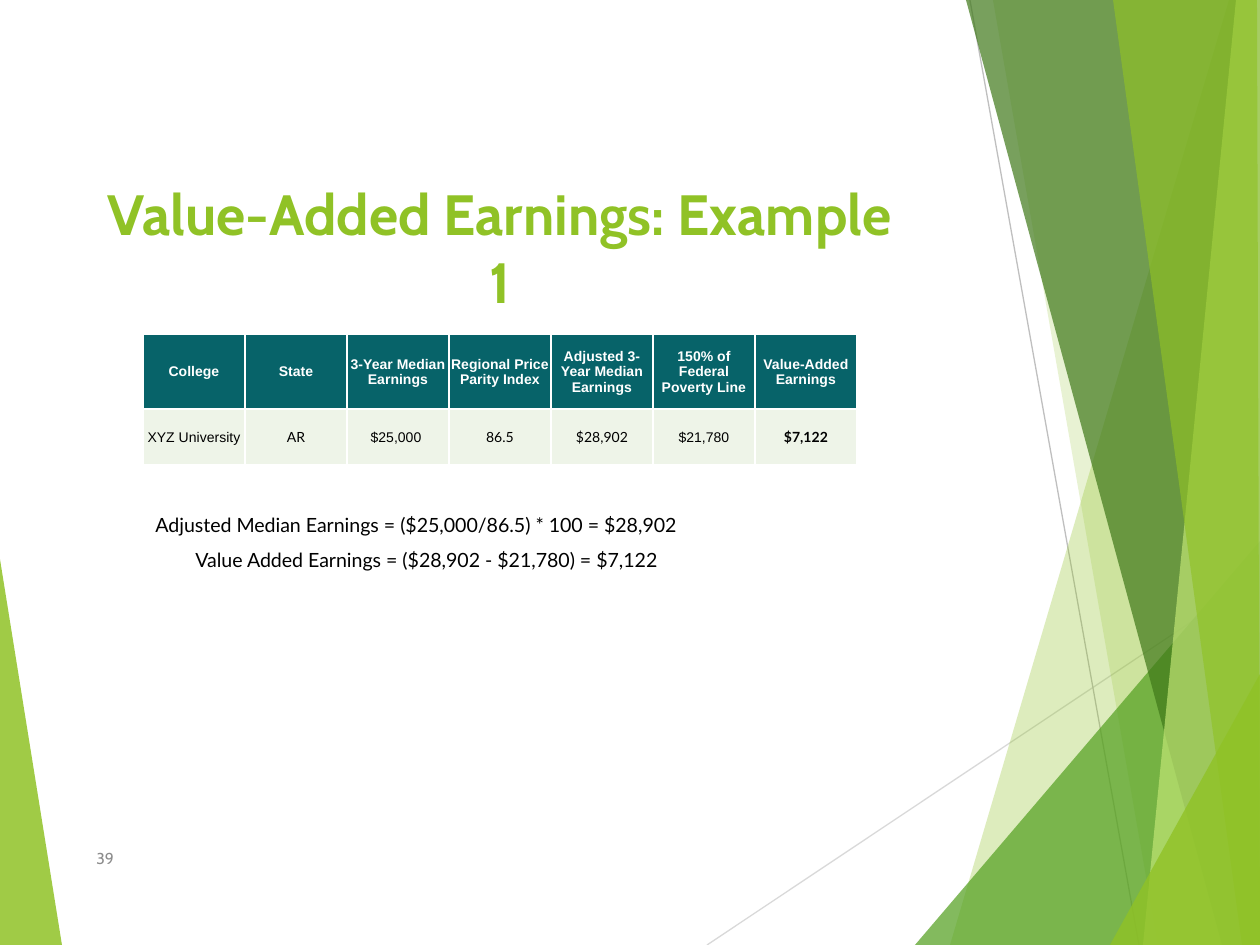
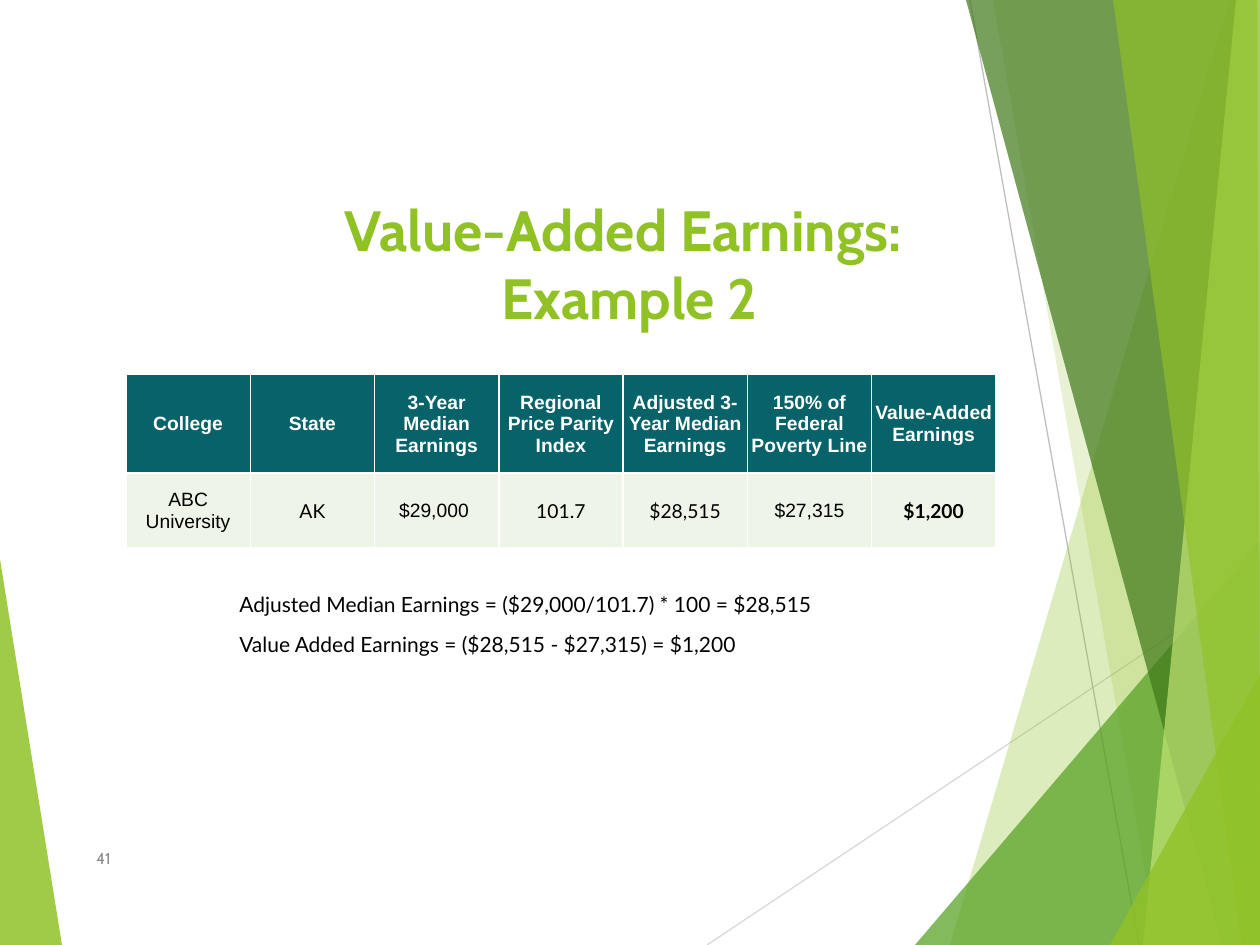
from lxml import etree
from pptx import Presentation
from pptx import util as u
from pptx.dml.color import RGBColor
from pptx.enum import shapes, text
from pptx.oxml.ns import qn

EMU_PER_PX = 914400 / 126
SLIDE_W, SLIDE_H = 1260, 945

COLORS = {
    "lime": "90C226", "green": "54A021", "forest": "3F7819", "pale_lime": "C0E474",
    "light_line": "D9D9D9", "mid_line": "BFBFBF", "footer": "8C8C8C",
    "header": "076369", "row": "EEF4E8", "white": "FFFFFF", "black": "000000",
}
TITLE_FONT, BODY_FONT, TABLE_FONT = "Cabin", "Lato", "Arial"

# Lines: colour, start, end
LINES = [
    ("light_line", (707, 945), (1260, 576)),
    ("mid_line", (970, 0), (1139, 945)),
]
# Facets, back to front: colour, opacity in percent, corners
LEFT_FACET = ("lime", 85, [(0, 559), (62, 945), (0, 945)])
RIGHT_FACETS = [
    ("lime", 30, [(1229, 0), (950, 945), (1260, 945), (1260, 0)]),
    ("lime", 20, [(993, 0), (1158, 945), (1260, 945), (1260, 0)]),
    ("green", 72, [(915, 945), (1260, 541), (1260, 945)]),
    ("forest", 70, [(966, 0), (1222, 945), (1260, 945), (1260, 0)]),
    ("pale_lime", 70, [(1236, 0), (1143, 945), (1260, 945), (1260, 0)]),
    ("lime", 65, [(1113, 0), (1242, 945), (1260, 945), (1257, 0)]),
    ("lime", 80, [(1110, 945), (1260, 674), (1260, 945)]),
]

HEADINGS = ["College", "State", "3-Year Median Earnings", "Regional Price Parity Index",
            "Adjusted 3-Year Median Earnings", "150% of Federal Poverty Line",
            "Value-Added Earnings"]
VALUE_FONTS = [TABLE_FONT, BODY_FONT, TABLE_FONT, BODY_FONT, BODY_FONT, TABLE_FONT, BODY_FONT]

# Boxes are left, top, width, height; formulas pair an indent with a text
EXAMPLES = [
    dict(
        title="Value-Added Earnings: Example 1", title_box=(92, 173, 815, 68), number="39",
        values=["XYZ University", "AR", "$25,000 ", "86.5", "$28,902", "$21,780", "$7,122"],
        table_box=(143, 334, 714, 131), header_h=75, table_size=8,
        formula_box=(108, 503, 747, 111), formula_size=11.2, gap=4.5,
        formulas=[(35, "Adjusted Median Earnings = ($25,000/86.5) * 100 = $28,902"),
                  (75, "Value Added Earnings = ($28,902 - $21,780) = $7,122")],
    ),
    dict(
        title="Value-Added Earnings: \vExample 2", title_box=(222, 189, 815, 68), number="41",
        values=["ABC University", "AK", "$29,000 ", "101.7", "$28,515", "$27,315", "$1,200"],
        table_box=(126, 374, 870, 174), header_h=99, table_size=11,
        formula_box=(179, 582, 741, 81), formula_size=12, gap=6,
        formulas=[(48, "Adjusted Median Earnings = ($29,000/101.7) * 100 = $28,515"),
                  (48, "Value Added Earnings = ($28,515 - $27,315) = $1,200")],
    ),
]


def px(n):
    return u.Emu(round(n * EMU_PER_PX))


def rgb(name):
    return RGBColor.from_string(COLORS[name])


def write(p, content, size, font, color="black", bold=False, align=text.PP_ALIGN.LEFT,
          indent=0, line_spacing=None, after=0):
    """Fill one paragraph with formatted text."""
    p.text = content
    p.alignment = align
    p.space_after = u.Pt(after)
    if line_spacing:
        p.line_spacing = line_spacing
    if indent:
        p._p.get_or_add_pPr().set("marL", str(px(indent)))
    for r in p.runs:
        r.font.size, r.font.name, r.font.bold = u.Pt(size), font, bold
        r.font.color.rgb = rgb(color)


def text_box(s, box, anchor=text.MSO_ANCHOR.TOP):
    tf = s.shapes.add_textbox(*map(px, box)).text_frame
    tf.word_wrap = True
    tf.vertical_anchor = anchor
    return tf


def add_line(s, color, start, end):
    line = s.shapes.add_connector(shapes.MSO_CONNECTOR.STRAIGHT, *map(px, start + end))
    line.line.color.rgb = rgb(color)
    line.line.width = u.Pt(0.75)
    etree.SubElement(line._element.spPr, qn("a:effectLst"))


def add_facet(s, color, opacity, corners):
    builder = s.shapes.build_freeform(*corners[0], scale=EMU_PER_PX)
    builder.add_line_segments(corners[1:], close=True)
    sp = builder.convert_to_shape()
    sp.shadow.inherit = False
    sp.line.fill.background()
    sp.fill.solid()
    sp.fill.fore_color.rgb = rgb(color)
    clr = sp._element.spPr.find(qn("a:solidFill"))[0]
    etree.SubElement(clr, qn("a:alpha"), val=str(opacity * 1000))


def add_backdrop(s):
    add_facet(s, *LEFT_FACET)
    for line in LINES:
        add_line(s, *line)
    for facet in RIGHT_FACETS:
        add_facet(s, *facet)


def add_title(s, box, title):
    write(text_box(s, box).paragraphs[0], title, 32.4, TITLE_FONT, "lime", bold=True,
          align=text.PP_ALIGN.CENTER)


def add_slide_number(s, number):
    tf = text_box(s, (84, 833, 638, 50), text.MSO_ANCHOR.MIDDLE)
    write(tf.paragraphs[0], number, 9, TITLE_FONT, "footer")


def style_cell(cell, fill):
    cell.vertical_anchor = text.MSO_ANCHOR.MIDDLE
    cell.margin_left = cell.margin_right = cell.margin_top = px(1)
    cell.margin_bottom = 0
    # Borders come before the fill in the cell properties
    tc_pr = cell._tc.get_or_add_tcPr()
    for side in ("lnL", "lnR", "lnT", "lnB"):
        ln = etree.SubElement(tc_pr, qn(f"a:{side}"), w=str(u.Pt(1)))
        solid = etree.SubElement(ln, qn("a:solidFill"))
        etree.SubElement(solid, qn("a:srgbClr"), val=COLORS["white"])
    cell.fill.solid()
    cell.fill.fore_color.rgb = rgb(fill)


def add_earnings_table(s, box, header_h, size, values):
    table = s.shapes.add_table(2, len(HEADINGS), *map(px, box)).table
    table.first_row = table.horz_banding = False
    table.rows[0].height, table.rows[1].height = px(header_h), px(box[3] - header_h)
    last = len(HEADINGS) - 1
    for i, (heading, value, font) in enumerate(zip(HEADINGS, values, VALUE_FONTS)):
        table.columns[i].width = px(box[2] / len(HEADINGS))
        head, body = table.cell(0, i), table.cell(1, i)
        style_cell(head, "header")
        style_cell(body, "row")
        write(head.text_frame.paragraphs[0], heading, size, TABLE_FONT, "white", bold=True,
              align=text.PP_ALIGN.CENTER)
        write(body.text_frame.paragraphs[0], value, size, font, bold=i == last,
              align=text.PP_ALIGN.CENTER)


def add_formulas(s, box, size, gap, formulas):
    tf = text_box(s, box)
    for i, (indent, formula) in enumerate(formulas):
        p = tf.add_paragraph() if i else tf.paragraphs[0]
        write(p, formula, size, BODY_FONT, indent=indent, line_spacing=1.15, after=gap)


def add_example_slide(prs, ex):
    s = prs.slides.add_slide(prs.slide_layouts[6])
    add_backdrop(s)
    add_title(s, ex["title_box"], ex["title"])
    add_slide_number(s, ex["number"])
    add_earnings_table(s, ex["table_box"], ex["header_h"], ex["table_size"], ex["values"])
    add_formulas(s, ex["formula_box"], ex["formula_size"], ex["gap"], ex["formulas"])


def main():
    prs = Presentation()
    prs.slide_width, prs.slide_height = px(SLIDE_W), px(SLIDE_H)
    for example in EXAMPLES:
        add_example_slide(prs, example)
    prs.save("out.pptx")


if __name__ == "__main__":
    main()
